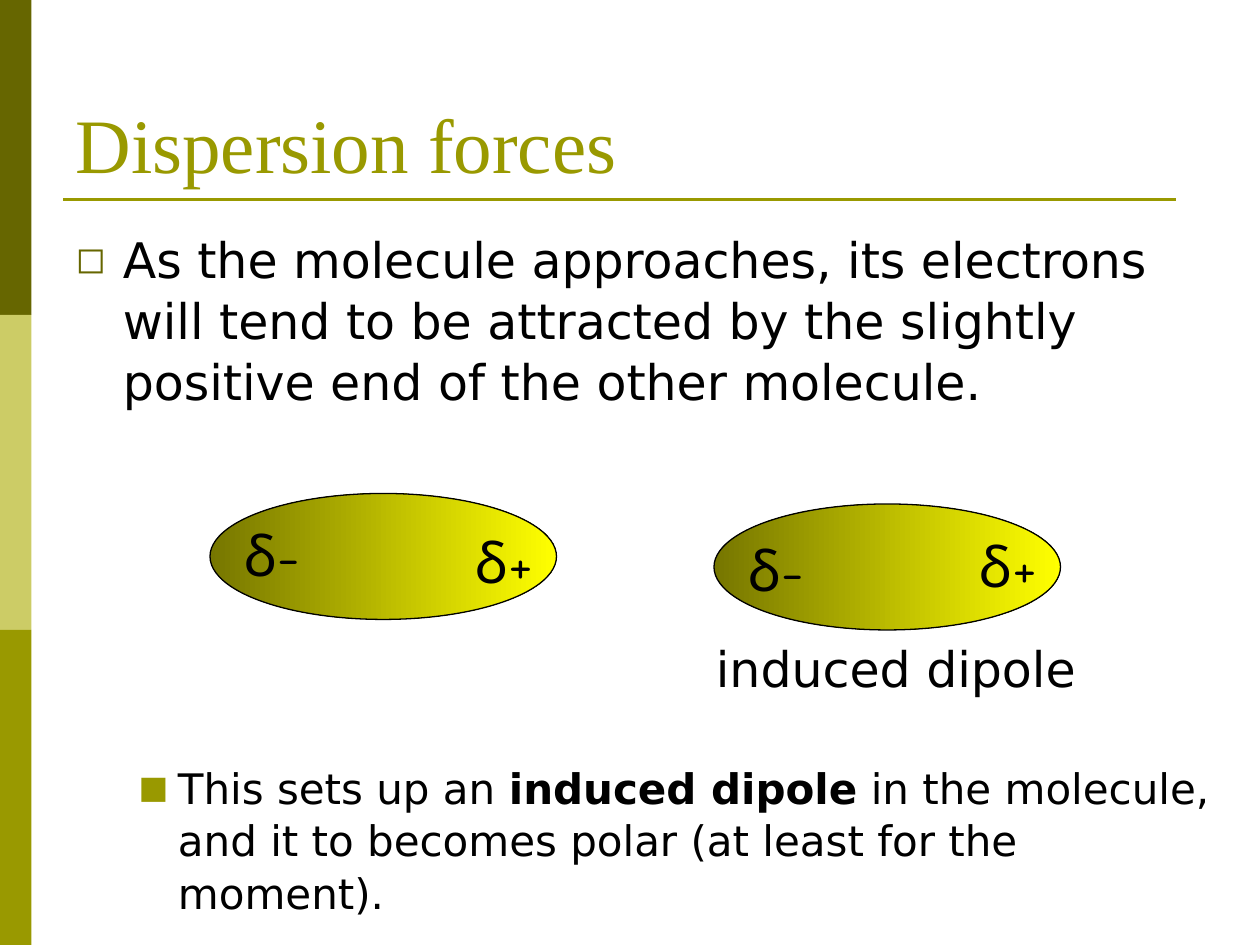
from lxml.etree import SubElement
from pptx import Presentation
from pptx.dml.color import RGBColor
from pptx.enum.shapes import MSO_CONNECTOR, MSO_SHAPE
from pptx.enum.text import MSO_ANCHOR, MSO_AUTO_SIZE, PP_ALIGN
from pptx.oxml.ns import qn
from pptx.util import Pt

DARK_OLIVE = RGBColor(0x66, 0x66, 0x00)
OLIVE = RGBColor(0x99, 0x99, 0x00)
PALE_OLIVE = RGBColor(0xCC, 0xCC, 0x66)
SHADE = RGBColor(0x76, 0x76, 0x00)
YELLOW = RGBColor(0xFF, 0xFF, 0x00)
BLACK = RGBColor(0x00, 0x00, 0x00)


def add_text(paragraph, text, font, size, color, bold=False):
    run = paragraph.add_run()
    run.text = text
    for name, value in {"name": font, "size": Pt(size), "bold": bold}.items():
        setattr(run.font, name, value)
    run.font.color.rgb = color


def set_bullet(paragraph, char, color, margin, hanging):
    props = paragraph._p.get_or_add_pPr()
    props.set("marL", str(Pt(margin)))
    props.set("indent", str(-Pt(hanging)))
    bullet_color = SubElement(props, qn("a:buClr"))
    SubElement(bullet_color, qn("a:srgbClr"), val=str(color))
    SubElement(props, qn("a:buSzPct"), val="75000")
    SubElement(props, qn("a:buFont"), typeface="DejaVu Sans")
    SubElement(props, qn("a:buChar"), char=char)


prs = Presentation()
prs.slide_width, prs.slide_height = Pt(720), Pt(540)
slide = prs.slides.add_slide(prs.slide_layouts[1])
shapes = slide.shapes
title, body = shapes.title, slide.placeholders[1]

# Side bars and the rule under the title
for row, color in enumerate([DARK_OLIVE, PALE_OLIVE, OLIVE]):
    bar = shapes.add_shape(MSO_SHAPE.RECTANGLE, 0, Pt(180 * row), Pt(18), Pt(180))
    bar.shadow.inherit = False
    bar.fill.solid()
    bar.fill.fore_color.rgb = color
    bar.line.fill.background()

rule = shapes.add_connector(MSO_CONNECTOR.STRAIGHT, Pt(36), Pt(114), Pt(672), Pt(114))
rule.line.color.rgb = OLIVE
rule.line.width = Pt(1.5)
SubElement(rule._element.spPr, qn("a:effectLst"))

# Title and list
for placeholder, box, anchor in [
    (title, (36, 21.6, 648, 90), MSO_ANCHOR.BOTTOM),
    (body, (36, 126, 672, 414), MSO_ANCHOR.TOP),
]:
    for side, length in zip(("left", "top", "width", "height"), box):
        setattr(placeholder, side, Pt(length))
    placeholder.text_frame.vertical_anchor = anchor
    placeholder.text_frame.auto_size = MSO_AUTO_SIZE.NONE

heading = title.text_frame.paragraphs[0]
heading.alignment = PP_ALIGN.LEFT
add_text(heading, "Dispersion forces", "Times New Roman", 44, OLIVE)

approach = body.text_frame.paragraphs[0]
consequence = body.text_frame.add_paragraph()
consequence.level = 1
# The wide space before the second point leaves room for the molecules
for point, space in [(approach, 0), (consequence, 200)]:
    point.line_spacing = 1.04
    point.space_before = Pt(space)
set_bullet(approach, "◻", DARK_OLIVE, 27, 27)
set_bullet(consequence, "■", OLIVE, 58.5, 22.5)

add_text(approach, "As the molecule approaches, its electrons will tend to be attracted "
         "by the slightly positive end of the other molecule.", "DejaVu Sans", 28, BLACK)
for text, bold in [
    ("This sets up an ", False),
    ("induced dipole", True),
    (" in the molecule, and it to becomes polar (at least for the moment).", False),
]:
    add_text(consequence, text, "DejaVu Sans", 24, BLACK, bold)

# Molecules
for left, top in [(120, 282), (408, 288)]:
    molecule = shapes.add_shape(MSO_SHAPE.OVAL, Pt(left), Pt(top), Pt(198), Pt(72))
    molecule.shadow.inherit = False
    molecule.fill.gradient()
    molecule.fill.gradient_angle = 0
    for stop, color in zip(molecule.fill.gradient_stops, [SHADE, YELLOW]):
        stop.color.rgb = color
    molecule.line.color.rgb = BLACK
    molecule.line.width = Pt(0.75)

# Charges and caption
for text, left, top, width, height, font, size in [
    ("δ-", 132, 294, 48, 45.5, "Comic Neue", 32),
    ("δ+", 264, 298, 48, 45.5, "Comic Neue", 32),
    ("δ+", 552, 300, 48, 45.5, "Comic Neue", 32),
    ("δ-", 420, 302.5, 48, 45.5, "Comic Neue", 32),
    ("induced dipole", 402, 361.5, 234, 41, "DejaVu Sans", 28),
]:
    label = shapes.add_textbox(Pt(left), Pt(top), Pt(width), Pt(height)).text_frame
    label.word_wrap = True
    add_text(label.paragraphs[0], text, font, size, BLACK)

prs.save("out.pptx")
